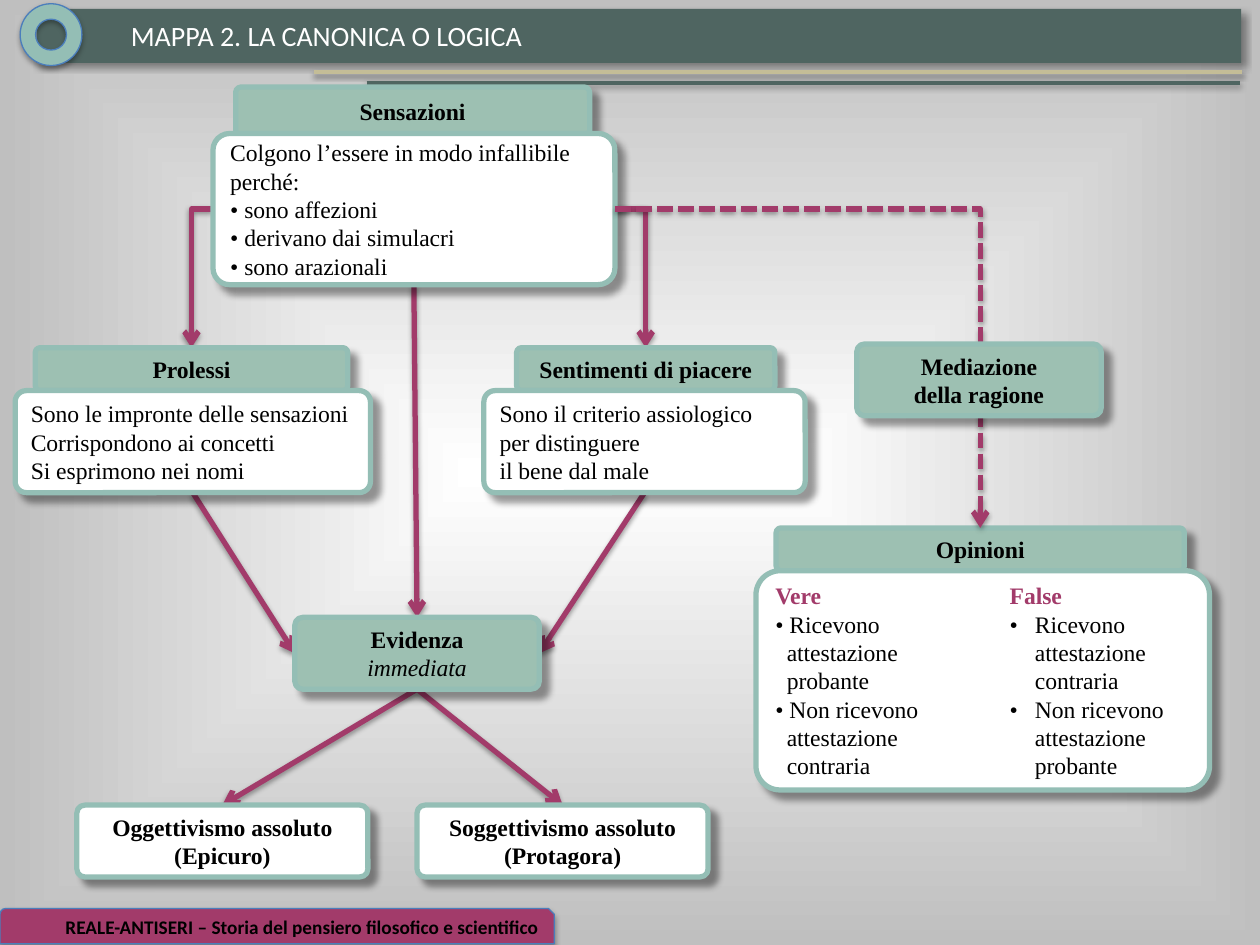
from typing import NamedTuple

from lxml.etree import SubElement
from pptx import Presentation
from pptx.dml.color import RGBColor
from pptx.enum.dml import MSO_LINE
from pptx.enum.shapes import MSO_CONNECTOR, MSO_SHAPE
from pptx.enum.text import MSO_ANCHOR, PP_ALIGN
from pptx.oxml.ns import qn
from pptx.util import Inches, Pt

COLORS = {
    "white": "FFFFFF", "black": "000000", "gray": "BFBFBF", "bar": "4F6561",
    "sand": "C4BD97", "berry": "A23B6A", "sage": "9DC0B2", "border": "94BEB5",
    "blue": "4B7EBC",
}
SERIF, SANS = "Times New Roman", "Calibri"
TOP, LEFT, BOTTOM, RIGHT = range(4)


class Shadow(NamedTuple):
    opacity: int
    blur: float
    dist: float
    angle: int


BOX_SHADOW = Shadow(40, 4, 6, 45)
BAR_SHADOW = Shadow(40, 4, 3, 45)
LINE_SHADOW = Shadow(38, 3.1, 1.6, 90)
BADGE_SHADOW = Shadow(35, 3.1, 1.8, 90)


class Box(NamedTuple):
    name: str
    x: float
    y: float
    w: float
    h: float
    text: str
    fill: str = "sage"
    bold: bool = True
    align: PP_ALIGN = PP_ALIGN.CENTER
    tabs: tuple = ()


class Link(NamedTuple):
    start: str
    start_side: int
    end: str
    end_side: int
    bent: bool = False
    dashed: bool = False


def body(name: str, x: float, y: float, w: float, h: float, text: str, tabs: tuple = ()) -> Box:
    return Box(name, x, y, w, h, text, "white", False, PP_ALIGN.LEFT, tabs)


OPINIONS = """Vere \tFalse
• Ricevono \t• \tRicevono
\tattestazione \t\tattestazione
\tprobante \t\tcontraria
• Non ricevono \t• \tNon ricevono
\tattestazione \t\tattestazione
\tcontraria \t\tprobante"""

# Back to front
ITEMS = [
    Link("sensations", BOTTOM, "evidence", TOP),
    Link("evidence", BOTTOM, "objectivism", TOP),
    Link("evidence", BOTTOM, "subjectivism", TOP),
    Link("sensations", LEFT, "prolepsis head", TOP, bent=True),
    Link("sensations", RIGHT, "feelings head", TOP, bent=True),
    Link("prolepsis", BOTTOM, "evidence", LEFT),
    Link("feelings", BOTTOM, "evidence", RIGHT),
    Box("opinions head", 6.16, 4.19, 3.24, 0.34, "Opinioni"),
    Box("sensations head", 1.87, 0.69, 2.81, 0.39, "Sensazioni"),
    body("sensations", 1.69, 1.06, 3.19, 1.2,
         "Colgono l’essere in modo infallibile perché:\n• sono affezioni\n"
         "• derivano dai simulacri\n• sono arazionali"),
    body("opinions", 6, 4.53, 3.6, 1.74, OPINIONS, (0.09, 1.86, 2.06)),
    Box("prolepsis head", 0.28, 2.76, 2.48, 0.34, "Prolessi"),
    body("prolepsis", 0.12, 3.1, 2.82, 0.81,
         "Sono le impronte delle sensazioni\nCorrispondono ai concetti\nSi esprimono nei nomi"),
    Box("feelings head", 4.1, 2.76, 2.05, 0.34, "Sentimenti di piacere"),
    body("feelings", 3.84, 3.1, 2.55, 0.81,
         "Sono il criterio assiologico\nper distinguere\nil bene dal male"),
    Box("evidence", 2.34, 4.9, 1.94, 0.57, "Evidenza\nimmediata"),
    Box("objectivism", 0.61, 6.39, 2.31, 0.57, "Oggettivismo assoluto\n(Epicuro)", "white"),
    Box("subjectivism", 3.31, 6.39, 2.31, 0.57, "Soggettivismo assoluto\n(Protagora)", "white"),
    Link("sensations", RIGHT, "opinions head", TOP, bent=True, dashed=True),
    Box("mediation", 6.8, 2.73, 1.94, 0.57, "Mediazione\vdella ragione"),
]


def rgb(name: str) -> RGBColor:
    return RGBColor.from_string(COLORS[name])


def add_shadow(sp, shadow: Shadow) -> None:
    """Call after fill and line are set, so that the effect follows them."""
    effects = SubElement(sp._element.spPr, qn("a:effectLst"))
    outer = SubElement(effects, qn("a:outerShdw"), blurRad=str(Pt(shadow.blur)),
                       dist=str(Pt(shadow.dist)), dir=str(shadow.angle * 60000),
                       algn="tl", rotWithShape="0")
    clr = SubElement(outer, qn("a:srgbClr"), val=COLORS["black"])
    SubElement(clr, qn("a:alpha"), val=str(shadow.opacity * 1000))


def add_panel(s, kind, x, y, w, h, fill, shadow: Shadow, line="", width=0.75):
    sp = s.shapes.add_shape(kind, Inches(x), Inches(y), Inches(w), Inches(h))
    sp.fill.solid()
    sp.fill.fore_color.rgb = rgb(fill)
    if line:
        sp.line.color.rgb = rgb(line)
        sp.line.width = Pt(width)
    else:
        sp.line.fill.background()
    add_shadow(sp, shadow)
    return sp


def write(tf, text: str, font: str, size: float, color="black", bold=False,
          align=PP_ALIGN.LEFT) -> None:
    tf.text = text
    for p in tf.paragraphs:
        p.alignment = align
        for r in p.runs:
            r.font.name, r.font.size, r.font.bold = font, Pt(size), bold
            r.font.color.rgb = rgb(color)


def add_box(s, box: Box):
    sp = add_panel(s, MSO_SHAPE.ROUNDED_RECTANGLE, box.x, box.y, box.w, box.h,
                   box.fill, BOX_SHADOW, "border", 3)
    sp.adjustments[0] = 0.11
    tf = sp.text_frame
    tf.word_wrap = True
    tf.vertical_anchor = MSO_ANCHOR.MIDDLE
    write(tf, box.text, SERIF, 13.5, bold=box.bold, align=box.align)
    if box.tabs:
        for p in tf.paragraphs:
            stops = box.tabs if p is not tf.paragraphs[0] and p.text != "Vere \tFalse" else (1.86,)
            tab_list = SubElement(p._p.get_or_add_pPr(), qn("a:tabLst"))
            for pos in stops:
                SubElement(tab_list, qn("a:tab"), pos=str(Inches(pos)), algn="l")
    return sp


def add_line(s, start, end, color: str, width: float, kind=MSO_CONNECTOR.STRAIGHT):
    cn = s.shapes.add_connector(kind, *map(Inches, (*start, *end)))
    cn.line.color.rgb = rgb(color)
    cn.line.width = Pt(width)
    add_shadow(cn, LINE_SHADOW)
    return cn


def side_point(box: Box, side: int) -> tuple[float, float]:
    fx, fy = ((0.5, 0), (0, 0.5), (0.5, 1), (1, 0.5))[side]
    return box.x + fx * box.w, box.y + fy * box.h


def add_link(s, link: Link, boxes: dict[str, Box]):
    kind = MSO_CONNECTOR.ELBOW if link.bent else MSO_CONNECTOR.STRAIGHT
    cn = add_line(s, side_point(boxes[link.start], link.start_side),
                  side_point(boxes[link.end], link.end_side), "berry", 3, kind)
    if link.bent:
        cn._element.spPr.find(qn("a:prstGeom")).set("prst", "bentConnector2")
    if link.dashed:
        cn.line.dash_style = MSO_LINE.SQUARE_DOT
    SubElement(cn._element.spPr.find(qn("a:ln")), qn("a:tailEnd"), type="arrow")
    return cn


def set_background(s) -> None:
    """Gradient that spreads from the centre of the slide."""
    fill = s.background.fill
    fill.gradient()
    for stop, color in zip(fill.gradient_stops, ("white", "gray")):
        stop.color.rgb = rgb(color)
    grad = s._element.find(".//" + qn("a:gradFill"))
    grad.remove(grad.find(qn("a:lin")))
    shade = SubElement(grad, qn("a:path"), path="shape")
    SubElement(shade, qn("a:fillToRect"), l="50000", t="50000", r="50000", b="50000")


def main() -> None:
    prs = Presentation()
    prs.slide_width, prs.slide_height = Inches(10), Inches(7.5)
    s = prs.slides.add_slide(prs.slide_layouts[6])
    set_background(s)

    add_panel(s, MSO_SHAPE.RECTANGLE, 0.29, 0.07, 9.56, 0.43, "bar", BAR_SHADOW)
    footer = add_panel(s, MSO_SHAPE.SNIP_ROUND_RECTANGLE, 0, 7.21, 4.4, 0.28,
                       "berry", BADGE_SHADOW, "blue")
    footer.text_frame.vertical_anchor = MSO_ANCHOR.MIDDLE
    footer.text_frame.word_wrap = True
    write(footer.text_frame, "REALE-ANTISERI – Storia del pensiero filosofico e scientifico",
          SANS, 11, bold=True, align=PP_ALIGN.RIGHT)
    add_line(s, (2.49, 0.57), (9.86, 0.57), "sand", 2)
    add_line(s, (2.91, 0.66), (9.84, 0.66), "bar", 2)

    boxes = {item.name: item for item in ITEMS if isinstance(item, Box)}
    shapes, links = {}, []
    for item in ITEMS:
        if isinstance(item, Box):
            shapes[item.name] = add_box(s, item)
        else:
            links.append((item, add_link(s, item, boxes)))
    for link, cn in links:
        cn.begin_connect(shapes[link.start], link.start_side)
        cn.end_connect(shapes[link.end], link.end_side)

    verdict = shapes["opinions"].text_frame.paragraphs[0].runs[0].font
    verdict.bold, verdict.color.rgb = True, rgb("berry")
    immediate = shapes["evidence"].text_frame.paragraphs[1].runs[0].font
    immediate.bold, immediate.italic = False, True

    title = s.shapes.add_textbox(Inches(0.94), Inches(0.1), Inches(3.37), Inches(0.37))
    write(title.text_frame, "MAPPA 2. LA CANONICA O LOGICA", SANS, 16, "white")
    add_panel(s, MSO_SHAPE.DONUT, 0.16, 0.03, 0.49, 0.49, "border", BADGE_SHADOW, "blue")
    prs.save("out.pptx")


if __name__ == "__main__":
    main()
